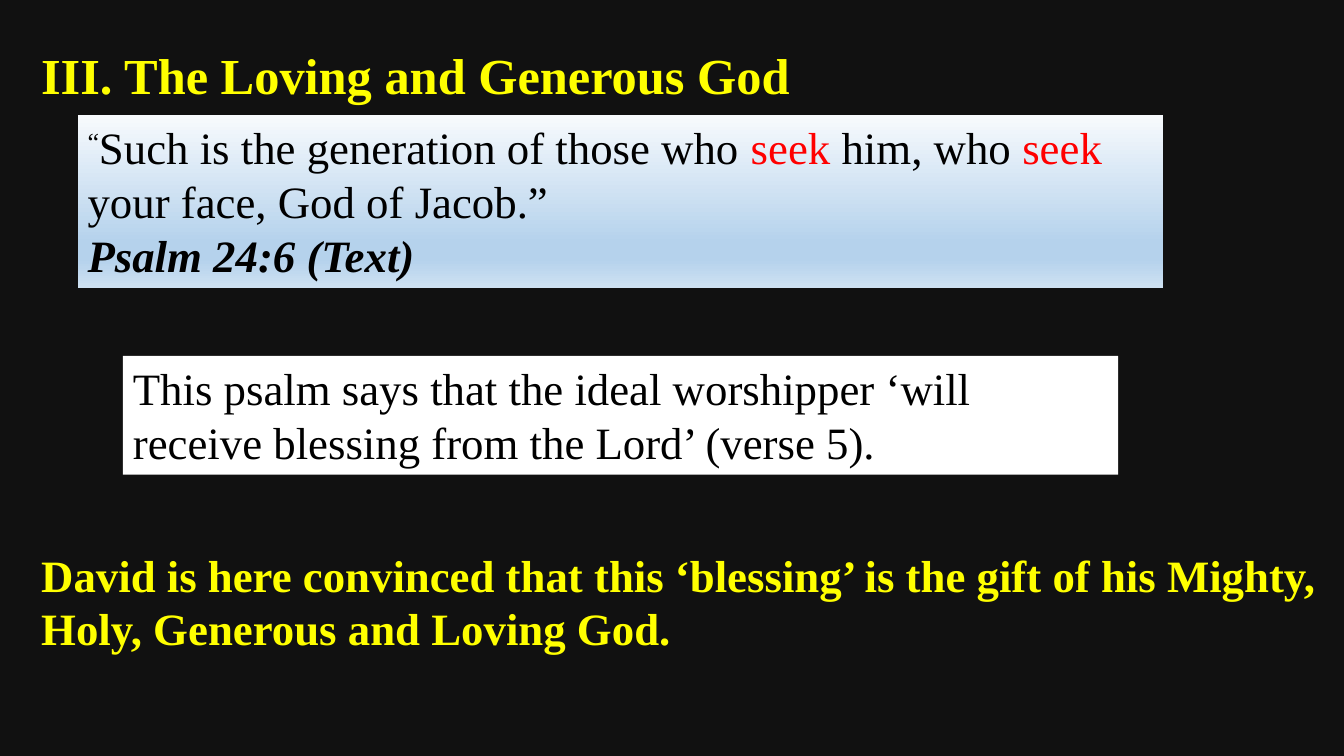
from lxml.etree import SubElement
from pptx import Presentation
from pptx.dml.color import RGBColor as RGB
from pptx.enum.shapes import MSO_SHAPE as SHAPE
from pptx.enum.text import MSO_ANCHOR as ANCHOR, MSO_AUTO_SIZE as AUTO, PP_ALIGN as ALIGN
from pptx.oxml.ns import qn
from pptx.util import Emu, Pt

PX = 9144
FONT = "Times New Roman"
COLORS = {"back": "111111", "white": "FFFFFF", "black": "000000",
          "yellow": "FFFF00", "red": "FF0000"}
VERSE_STOPS = [(0, "F7FAFD"), (74, "B5D2EC"), (83, "B5D2EC"), (100, "CEE1F2")]


def px(*lengths):
    """Turn px lengths into EMU."""
    return [Emu(n * PX) for n in lengths]


def color(name):
    """Look up a named colour."""
    return RGB.from_string(COLORS[name])


def write(s, paragraphs, size=32, ink="black", bold=False, wrap=True):
    """Fill a shape with paragraphs of (text, overrides) runs."""
    tf = s.text_frame
    tf.word_wrap = wrap
    tf.auto_size = AUTO.SHAPE_TO_FIT_TEXT
    tf.vertical_anchor = ANCHOR.TOP
    for i, runs in enumerate(paragraphs):
        p = tf.add_paragraph() if i else tf.paragraphs[0]
        p.alignment = ALIGN.LEFT
        for text, look in runs:
            r = p.add_run()
            r.text = text
            r.font.name = FONT
            r.font.size = Pt(size)
            r.font.bold = look.get("bold", bold)
            r.font.italic = look.get("italic", False)
            r.font.color.rgb = color(look.get("ink", ink))
            if "raise" in look:
                r.font._element.set("baseline", str(look["raise"] * 1000))


def add_heading(slide, box, lines, size):
    """Add bold yellow lines that do not wrap."""
    s = slide.shapes.add_textbox(*px(*box))
    write(s, [[(line, {})] for line in lines], size, "yellow", True, False)


def add_panel(slide, box, paragraphs):
    """Add a white text panel without an outline."""
    s = slide.shapes.add_shape(SHAPE.RECTANGLE, *px(*box))
    s.shadow.inherit = False
    s.fill.solid()
    s.fill.fore_color.rgb = color("white")
    s.line.fill.background()
    write(s, paragraphs)
    return s


def shade(s, stops):
    """Give a shape a gradient that runs from top to bottom."""
    s.fill.gradient()
    s.fill.gradient_angle = 270
    gs_list = s._element.spPr.find(".//" + qn("a:gsLst"))
    for gs in list(gs_list):
        gs_list.remove(gs)
    for percent, value in stops:
        gs = SubElement(gs_list, qn("a:gs"), pos=str(percent * 1000))
        SubElement(gs, qn("a:srgbClr"), val=value)


def main():
    """Build the slide and save it."""
    prs = Presentation()
    prs.slide_width, prs.slide_height = px(1333, 750)
    slide = prs.slides.add_slide(prs.slide_layouts[6])
    slide.background.fill.solid()
    slide.background.fill.fore_color.rgb = color("back")

    add_panel(slide, (122, 353, 987, 118), [
        [("This psalm says that the ideal worshipper ‘will receive blessing "
          "from the Lord’ (verse 5).", {})]])
    add_heading(slide, (31, 39, 770, 71), ["III. The Loving and Generous God"], 36)
    add_heading(slide, (31, 538, 1302, 118), [
        "David is here convinced that this ‘blessing’ is the gift of his Mighty,",
        "Holy, Generous and Loving God."], 32)
    verse = add_panel(slide, (77, 114, 1077, 172), [
        [("“", {"raise": 30}),
         ("Such is the generation of those who ", {}),
         ("seek", {"ink": "red"}),
         (" him, who ", {}),
         ("seek ", {"ink": "red"}),
         ("your face, God of Jacob.”", {})],
        [("Psalm 24:6 (Text)", {"bold": True, "italic": True})]])
    shade(verse, VERSE_STOPS)
    prs.save("out.pptx")


if __name__ == "__main__":
    main()
